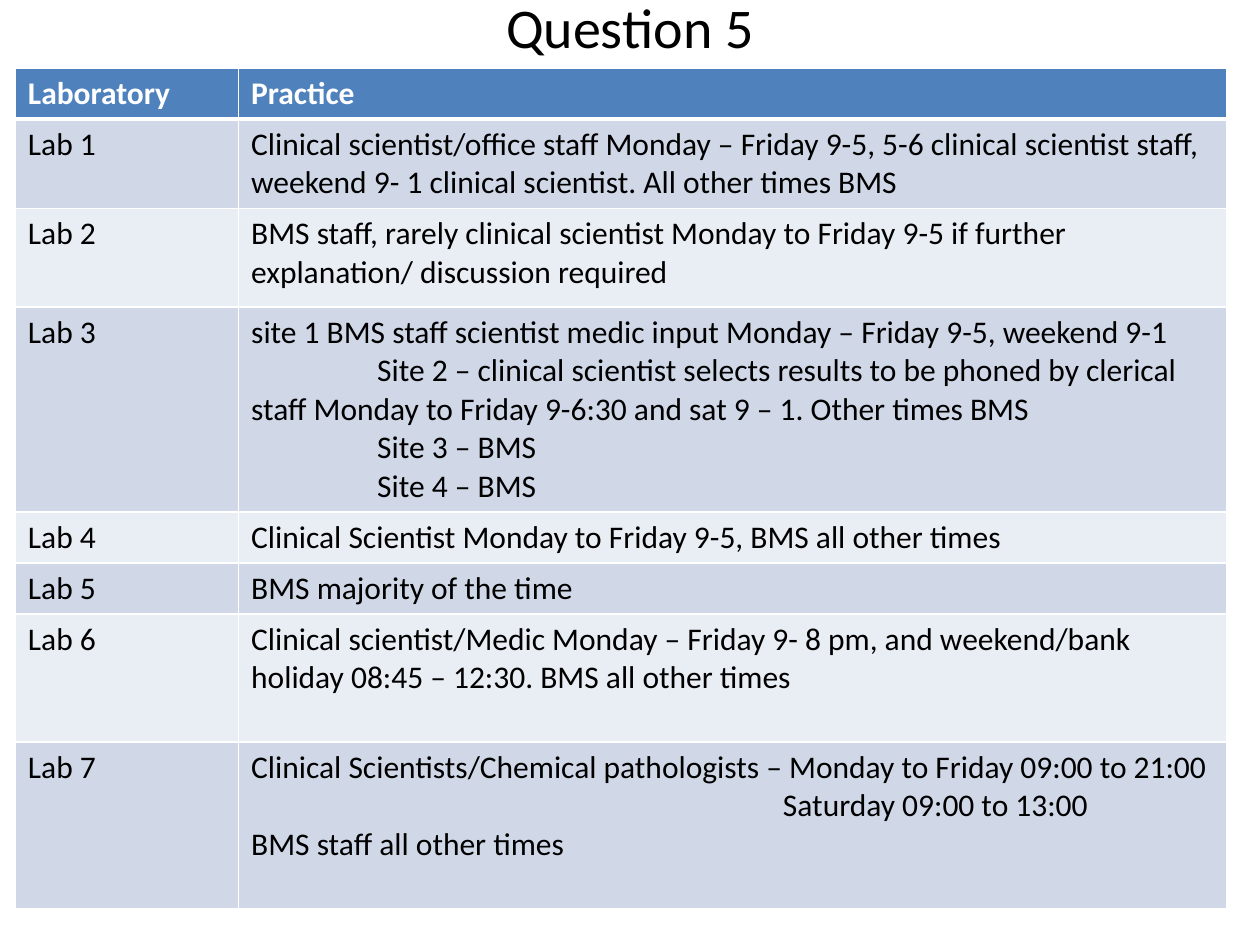
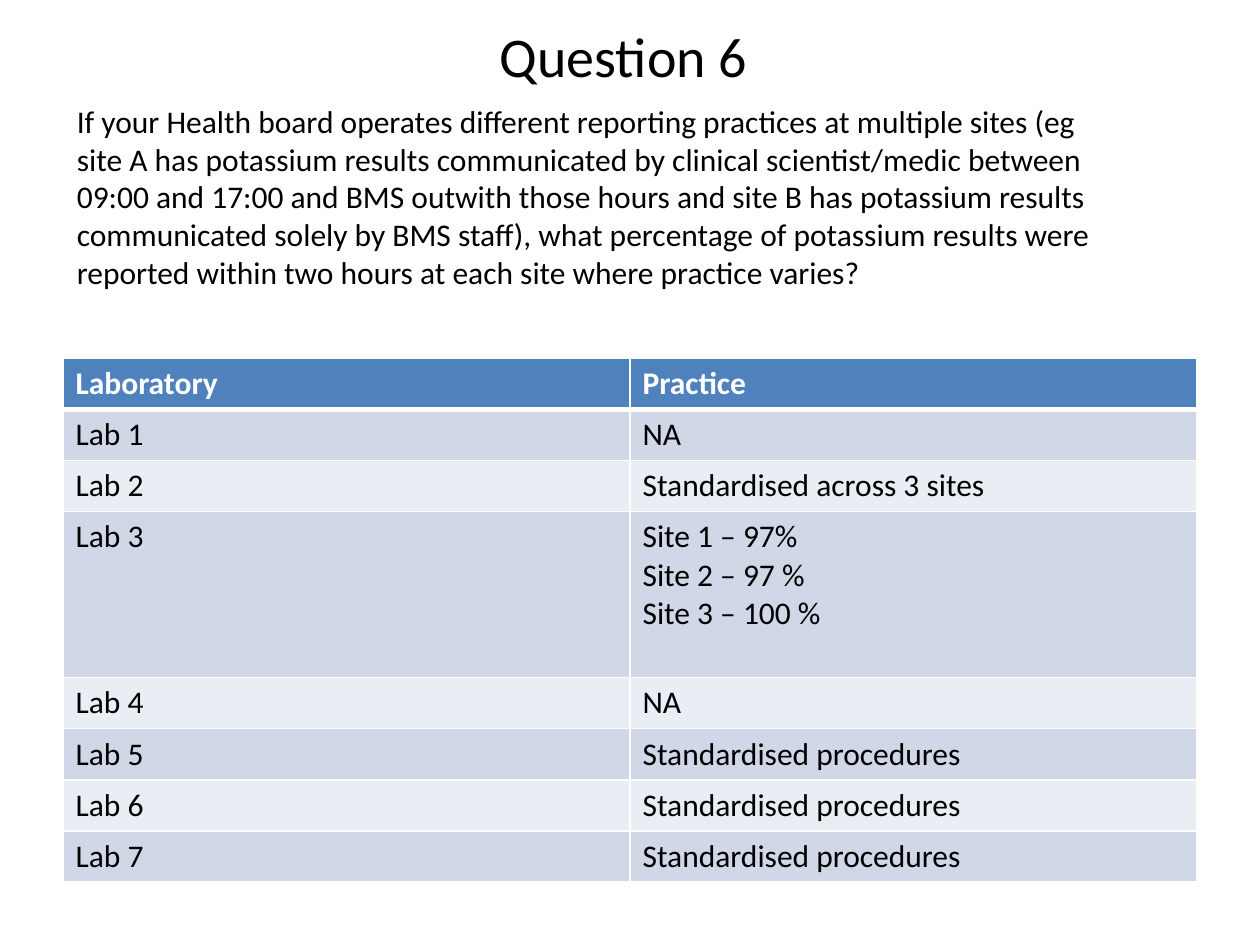
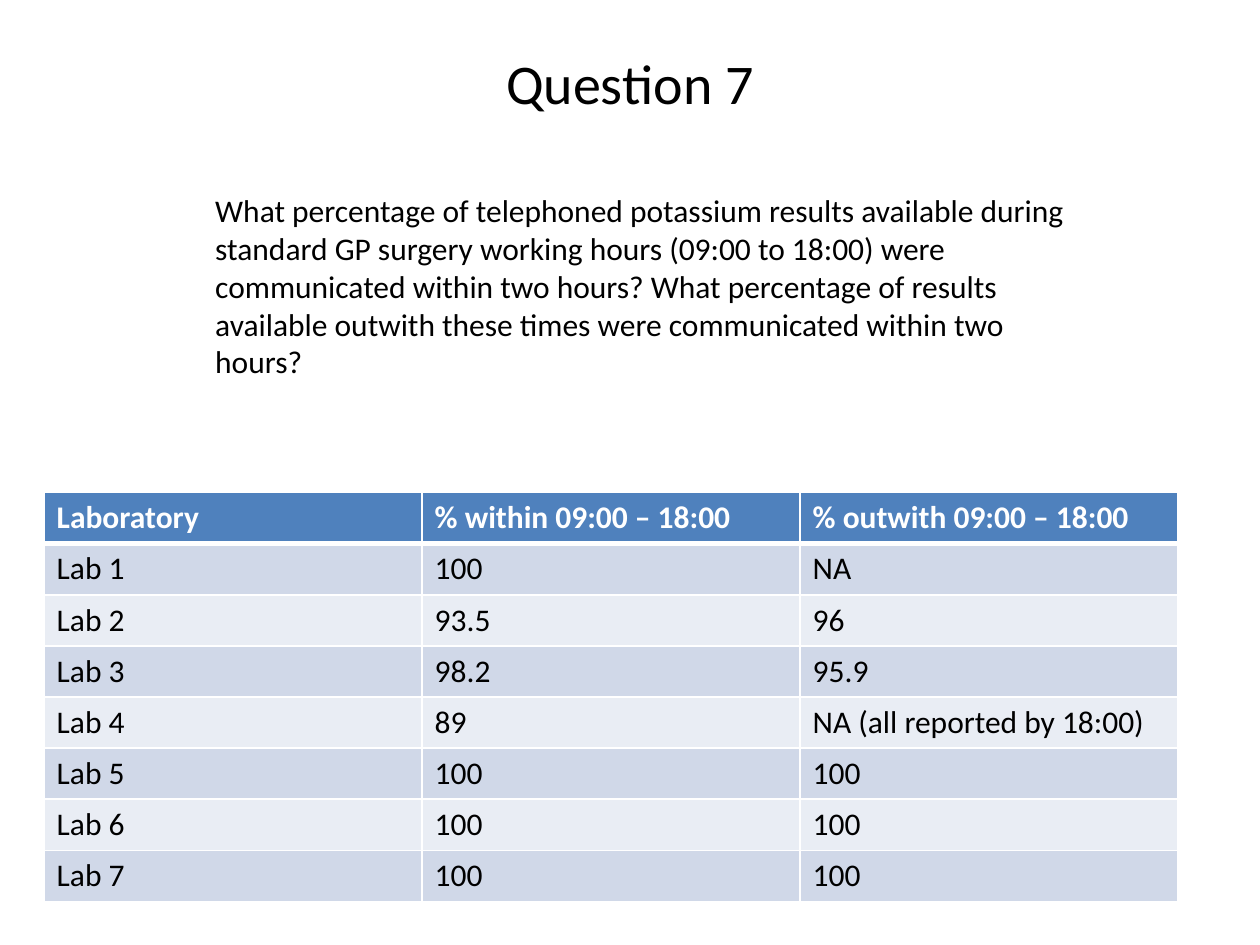
from dataclasses import dataclass
from typing import NamedTuple

from lxml.etree import SubElement
from pptx import Presentation
from pptx.dml.color import RGBColor as Rgb
from pptx.enum.text import MSO_ANCHOR as Anchor, PP_ALIGN as Align
from pptx.oxml.ns import qn
from pptx.util import Cm, Pt


# Shared look
@dataclass(frozen=True)
class Theme:
    font: str = "Calibri"
    title_size: int = 32
    body_size: int = 18
    text: str = "000000"
    white: str = "FFFFFF"
    header: str = "4F81BD"
    bands: tuple[str, str] = ("D0D8E8", "E9EDF4")
    rule: float = 1
    header_rule: float = 3
    row_height: float = 1.03


THEME = Theme()


# Content types, with all lengths in centimetres
class Line(NamedTuple):
    text: str
    indent: float = 0


class Box(NamedTuple):
    left: float
    top: float
    width: float
    height: float


@dataclass(frozen=True)
class Title:
    text: str
    top: float
    bottom_inset: float = 0.13


@dataclass(frozen=True)
class Prompt:
    text: str
    box: Box


@dataclass(frozen=True)
class Results:
    left: float
    top: float
    columns: tuple[float, ...]
    headings: tuple[str, ...]
    answers: tuple[tuple, ...]  # one entry per laboratory
    tall_rows: dict[int, float]  # laboratory number to row height


@dataclass(frozen=True)
class Question:
    title: Title
    results: Results
    prompt: Prompt | None = None


# Drawing
def write(frame, text: str | tuple[Line, ...], *, size: int = THEME.body_size,
          color: str = THEME.text, bold: bool = False, align=Align.LEFT) -> None:
    lines = (Line(text),) if isinstance(text, str) else text
    for number, line in enumerate(lines):
        paragraph = frame.add_paragraph() if number else frame.paragraphs[0]
        paragraph.alignment = align
        if line.indent:
            paragraph._p.get_or_add_pPr().set("indent", str(Cm(line.indent)))
        run = paragraph.add_run()
        run.text = line.text
        run.font.name = THEME.font
        run.font.size = Pt(size)
        run.font.bold = bold
        run.font.color.rgb = Rgb.from_string(color)


def add_frame(slide, box: Box):
    frame = slide.shapes.add_textbox(*map(Cm, box)).text_frame
    frame.word_wrap = True
    return frame


def draw_title(slide, title: Title) -> None:
    frame = add_frame(slide, Box(1.27, title.top, 22.86, 3.18))
    frame.vertical_anchor = Anchor.MIDDLE
    frame.margin_bottom = Cm(title.bottom_inset)
    write(frame, title.text, size=THEME.title_size, align=Align.CENTER)


def set_borders(cell, top: float, bottom: float) -> None:
    properties = cell._tc.get_or_add_tcPr()
    widths = {"L": THEME.rule, "R": THEME.rule, "T": top, "B": bottom}
    for side, width in widths.items():
        border = SubElement(properties, qn(f"a:ln{side}"), w=str(Pt(width)))
        fill = SubElement(border, qn("a:solidFill"))
        SubElement(fill, qn("a:srgbClr"), val=THEME.white)


def draw_results(slide, results: Results) -> None:
    labs = [(f"Lab {number}", *answer)
            for number, answer in enumerate(results.answers, 1)]
    rows = [results.headings, *labs]
    heights = [results.tall_rows.get(number, THEME.row_height)
               for number in range(len(rows))]
    table = slide.shapes.add_table(
        len(rows), len(results.columns), Cm(results.left), Cm(results.top),
        Cm(sum(results.columns)), Cm(sum(heights))).table
    for column, width in zip(table.columns, results.columns):
        column.width = Cm(width)
    for row_number, texts in enumerate(rows):
        table.rows[row_number].height = Cm(heights[row_number])
        is_header = row_number == 0
        band = THEME.header if is_header else THEME.bands[(row_number - 1) % 2]
        for column_number, text in enumerate(texts):
            cell = table.cell(row_number, column_number)
            set_borders(cell,
                        top=THEME.header_rule if row_number == 1 else THEME.rule,
                        bottom=THEME.header_rule if is_header else THEME.rule)
            cell.fill.solid()
            cell.fill.fore_color.rgb = Rgb.from_string(band)
            write(cell.text_frame, text, bold=is_header,
                  color=THEME.white if is_header else THEME.text)


def draw_question(slide, question: Question) -> None:
    draw_title(slide, question.title)
    draw_results(slide, question.results)
    if question.prompt:
        write(add_frame(slide, question.prompt.box), question.prompt.text)


# Content
SITE_INDENT = 2.54
STANDARDISED = ("Standardised procedures",)

QUESTIONS = (
    Question(
        Title("Question 5", top=-1.07),
        Results(
            left=0.31, top=1.37, columns=(4.5, 19.91),
            headings=("Laboratory", "Practice"),
            answers=(
                ("Clinical scientist/office staff Monday – Friday 9-5, 5-6 clinical "
                 "scientist staff, weekend 9- 1 clinical scientist. All other times BMS",),
                ("BMS staff, rarely clinical scientist Monday to Friday 9-5 if further "
                 "explanation/ discussion required",),
                ((Line("site 1 BMS staff scientist medic input Monday – Friday 9-5, "
                       "weekend 9-1"),
                  Line("Site 2 – clinical scientist selects results to be phoned by "
                       "clerical staff Monday to Friday 9-6:30 and sat 9 – 1. "
                       "Other times BMS", SITE_INDENT),
                  Line("Site 3 – BMS", SITE_INDENT),
                  Line("Site 4 – BMS", SITE_INDENT)),),
                ("Clinical Scientist Monday to Friday 9-5, BMS all other times",),
                ("BMS majority of the time",),
                ("Clinical scientist/Medic Monday – Friday 9- 8 pm, and weekend/bank "
                 "holiday 08:45 – 12:30. BMS all other times",),
                ((Line("Clinical Scientists/Chemical pathologists – Monday to Friday "
                       "09:00 to 21:00"),
                  Line("Saturday 09:00 to 13:00", 10.72),
                  Line("BMS staff all other times")),),
            ),
            tall_rows={1: 1.8, 2: 1.99, 3: 4.13, 6: 2.58, 7: 3.35},
        ),
    ),
    Question(
        Title("Question 6 ", top=-0.48),
        Results(
            left=1.27, top=7.22, columns=(11.43,) * 2,
            headings=("Laboratory", "Practice"),
            answers=(
                ("NA",),
                ("Standardised across 3 sites",),
                ((Line("Site 1 – 97%"), Line("Site 2 – 97 %"), Line("Site 3 – 100 %")),),
                ("NA",),
                STANDARDISED,
                STANDARDISED,
                STANDARDISED,
            ),
            tall_rows={3: 3.35},
        ),
        Prompt(
            "If your Health board operates different reporting practices at multiple "
            "sites (eg site A has potassium results communicated by clinical "
            "scientist/medic between 09:00 and 17:00 and BMS outwith those hours and "
            "site B has potassium results communicated solely by BMS staff), what "
            "percentage of potassium results were reported within two hours at each "
            "site where practice varies?",
            Box(1.3, 1.93, 21.59, 4.11),
        ),
    ),
    Question(
        Title("Question 7", top=0.76, bottom_inset=1.5),
        Results(
            left=0.89, top=9.93, columns=(7.62,) * 3,
            headings=("Laboratory", "% within 09:00 – 18:00", "% outwith 09:00 – 18:00"),
            answers=(
                ("100", "NA"),
                ("93.5", "96"),
                ("98.2", "95.9"),
                ("89", "NA (all reported by 18:00)"),
                ("100", "100"),
                ("100", "100"),
                ("100", "100"),
            ),
            tall_rows={},
        ),
        Prompt(
            "What percentage of telephoned potassium results available during standard "
            "GP surgery working hours (09:00 to 18:00) were communicated within two "
            "hours? What percentage of results available outwith these times were "
            "communicated within two hours?",
            Box(4.09, 3.73, 17.81, 4.11),
        ),
    ),
)


def main() -> None:
    deck = Presentation()
    deck.slide_width, deck.slide_height = Cm(25.4), Cm(19.05)
    blank = deck.slide_layouts[6]
    for question in QUESTIONS:
        draw_question(deck.slides.add_slide(blank), question)
    deck.save("out.pptx")


if __name__ == "__main__":
    main()
